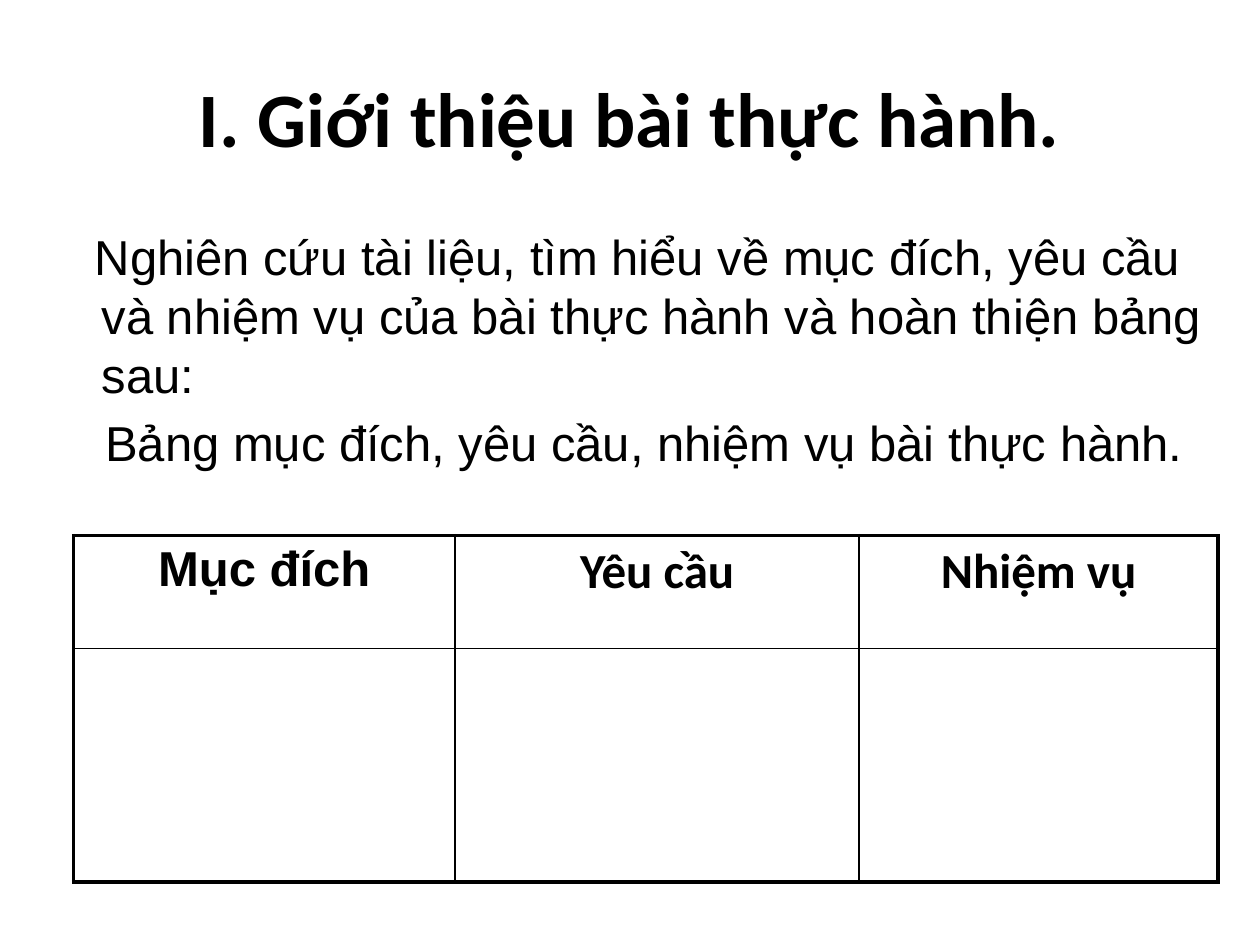
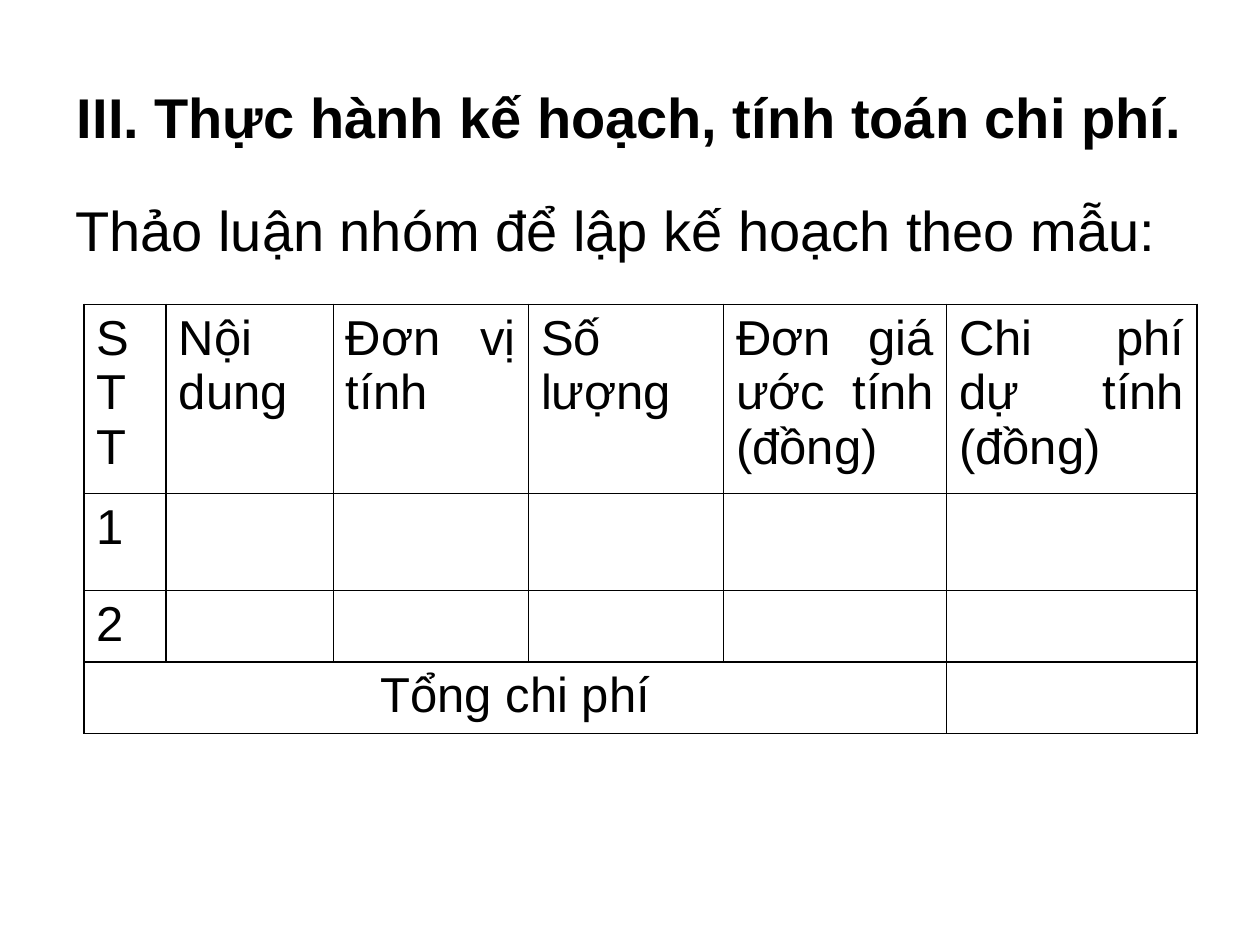
from lxml.etree import SubElement
from pptx import Presentation
from pptx.dml.color import RGBColor
from pptx.enum.text import MSO_ANCHOR, PP_ALIGN
from pptx.oxml.ns import qn
from pptx.util import Pt

BLACK = RGBColor(0, 0, 0)
WHITE = RGBColor(255, 255, 255)
SANS = "Arial"
HEADING = "Calibri"
TITLE_BOX = (36, 21.6, 648, 90)
THIN = 1
THICK = 2.25


def style(paragraph, size, font=SANS, bold=False, align=PP_ALIGN.LEFT, before=0):
    paragraph.font.size = Pt(size)
    paragraph.font.name = font
    paragraph.font.bold = bold
    paragraph.font.color.rgb = BLACK
    paragraph.alignment = align
    paragraph.space_before = Pt(before)


def add_text_frame(slide, box):
    frame = slide.shapes.add_textbox(*map(Pt, box)).text_frame
    frame.word_wrap = True
    return frame


def add_title(slide, text, size, font):
    frame = add_text_frame(slide, TITLE_BOX)
    frame.vertical_anchor = MSO_ANCHOR.MIDDLE
    frame.text = text
    style(frame.paragraphs[0], size, font, True, PP_ALIGN.CENTER)


def add_body(slide, box, lines, size, margin=0):
    """Each line is a pair: its text and its first-line indent."""
    frame = add_text_frame(slide, box)
    for number, (text, indent) in enumerate(lines):
        paragraph = frame.add_paragraph() if number else frame.paragraphs[0]
        paragraph.text = text
        style(paragraph, size, before=size * 0.2)
        properties = paragraph._p.get_or_add_pPr()
        properties.set("marL", str(Pt(margin)))
        properties.set("indent", str(Pt(indent)))


def set_borders(cell, widths):
    """Widths run left, right, top, bottom."""
    properties = cell._tc.get_or_add_tcPr()
    for side, width in zip("LRTB", widths):
        line = SubElement(properties, qn(f"a:ln{side}"), w=str(Pt(width)))
        fill = SubElement(line, qn("a:solidFill"))
        SubElement(fill, qn("a:srgbClr"), val=str(BLACK))


def add_grid(slide, left, top, columns, rows, outline):
    """A white table with thin inner lines and an outline of the given width."""
    table = slide.shapes.add_table(
        len(rows), len(columns), Pt(left), Pt(top), Pt(sum(columns)), Pt(sum(rows))
    ).table
    table.first_row = table.horz_banding = False
    for column, width in zip(table.columns, columns):
        column.width = Pt(width)
    for row, height in zip(table.rows, rows):
        row.height = Pt(height)
    for r in range(len(rows)):
        for c in range(len(columns)):
            at_edge = (c == 0, c == len(columns) - 1, r == 0, r == len(rows) - 1)
            cell = table.cell(r, c)
            set_borders(cell, [outline if edge else THIN for edge in at_edge])
            cell.fill.solid()
            cell.fill.fore_color.rgb = WHITE
    return table


def fill_cell(cell, text, **look):
    cell.text = text
    style(cell.text_frame.paragraphs[0], 28, **look)


def build_introduction(slide):
    add_title(slide, "I. Giới thiệu bài thực hành.", 44, HEADING)
    add_body(slide, (24, 126, 672, 174), [
        ("Nghiên cứu tài liệu, tìm hiểu về mục đích, yêu cầu và nhiệm vụ "
         "của bài thực hành và hoàn thiện bảng sau:", -4),
        ("Bảng mục đích, yêu cầu, nhiệm vụ bài thực hành.", 2),
    ], 28, margin=27)

    # Table of aims, requirements and tasks
    table = add_grid(slide, 42, 306, (218, 231, 205), (64.5, 133.5), THICK)
    headers = (("Mục đích", SANS), ("Yêu cầu", HEADING), ("Nhiệm vụ", HEADING))
    for c, (text, font) in enumerate(headers):
        fill_cell(table.cell(0, c), text, font=font, bold=True,
                  align=PP_ALIGN.CENTER, before=5.6)


def build_cost_plan(slide):
    add_title(slide, "III. Thực hành kế hoạch, tính toán chi phí.", 32, SANS)
    add_body(slide, (36, 108, 642, 48),
             [("Thảo luận nhóm để lập kế hoạch theo mẫu:", 0)], 32)

    # Cost table with a merged total row
    table = add_grid(slide, 48, 174, (47, 95.5, 111.5, 111.5, 127.5, 143),
                     (100.5, 55.5, 38.5, 38.5), THIN)
    headers = ("STT", "Nội dung", "Đơn vị tính", "Số lượng",
               "Đơn giá ước tính (đồng)", "Chi phí dự tính (đồng)")
    for c, text in enumerate(headers):
        fill_cell(table.cell(0, c), text, align=PP_ALIGN.JUSTIFY)
    for r in (1, 2):
        fill_cell(table.cell(r, 0), str(r), align=PP_ALIGN.JUSTIFY)
    total = table.cell(3, 0)
    total.merge(table.cell(3, 4))
    fill_cell(total, "Tổng chi phí", align=PP_ALIGN.CENTER)


def main():
    deck = Presentation()
    deck.slide_width, deck.slide_height = Pt(720), Pt(540)
    for build in (build_introduction, build_cost_plan):
        build(deck.slides.add_slide(deck.slide_layouts[6]))
    deck.save("out.pptx")


if __name__ == "__main__":
    main()
